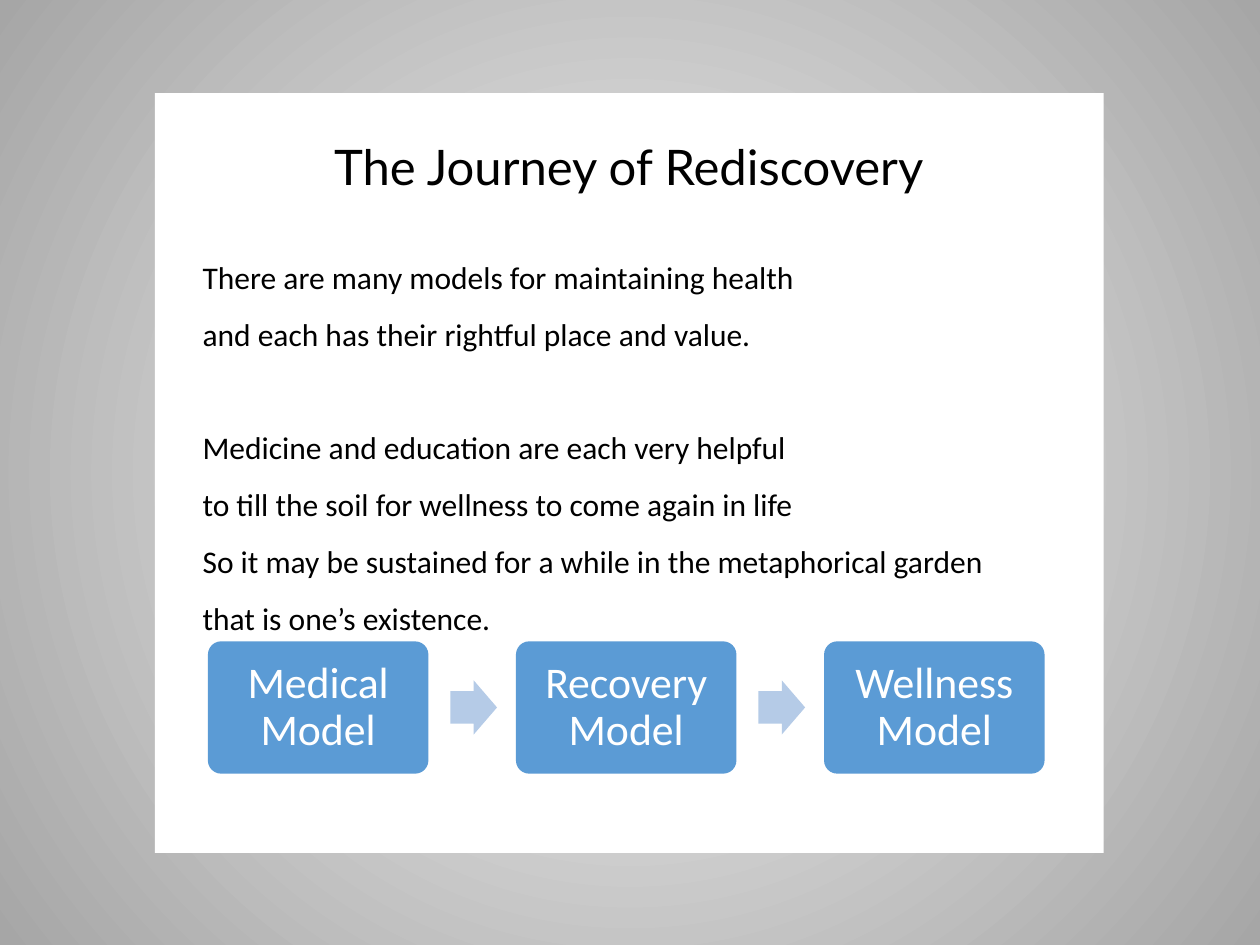
from lxml import etree
from pptx import Presentation
from pptx.dml.color import RGBColor
from pptx.enum import shapes, text
from pptx.util import Inches, Pt

HUES = {"rim": "A6A6A6", "core": "F2F2F2", "panel": "FFFFFF", "ink": "000000",
        "box": "5B9BD5", "arrow": "B5CBE7", "label": "FFFFFF"}
LINES = ["There are many models for maintaining health",
         "and each has their rightful place and value.",
         "Medicine and education are each very helpful",
         "to till the soil for wellness to come again in life",
         "So it may be sustained for a while in the metaphorical garden "
         "that is one’s existence."]
MODELS = ["Medical Model", "Recovery Model", "Wellness Model"]


def hue(name):
    return RGBColor.from_string(HUES[name])


def style(para, face, size, color):
    para.font.name = face
    para.font.size = Pt(size)
    para.font.color.rgb = hue(color)


def add_block(slide, kind, box, color):
    """Add a plain filled shape; box is left, top, width, height in inches."""
    block = slide.shapes.add_shape(kind, *map(Inches, box))
    block.shadow.inherit = False
    block.fill.solid()
    block.fill.fore_color.rgb = hue(color)
    block.line.fill.background()
    return block


def set_back(slide):
    """Fill the background with a gradient that spreads from the centre."""
    fill = slide.background.fill
    fill.gradient()
    for stop, name, pos in zip(fill.gradient_stops, ("core", "rim"), (0, 1)):
        stop.color.rgb = hue(name)
        stop.position = pos
    grad = slide.background._cSld.find(".//{*}gradFill")
    lin = grad.find("{*}lin")
    space = lin.tag[:-len("lin")]
    radial = etree.Element(space + "path", {"path": "circle"})
    etree.SubElement(radial, space + "fillToRect",
                     dict.fromkeys("ltrb", "50000"))
    grad.replace(lin, radial)


def add_title(slide, box):
    title = slide.shapes.title
    title.left, title.top, title.width, title.height = map(Inches, box)
    frame = title.text_frame
    frame.text = "The Journey of Rediscovery"
    frame.auto_size = text.MSO_AUTO_SIZE.NONE
    para = frame.paragraphs[0]
    para.alignment = text.PP_ALIGN.CENTER
    style(para, "Lato", 28, "ink")


def add_body(slide, box):
    frame = slide.shapes.add_textbox(*map(Inches, box)).text_frame
    frame.word_wrap = True
    frame.text = "\n".join(LINES)
    for para in frame.paragraphs:
        para.line_spacing = 1.5
        style(para, "Calibri", 18, "ink")
    frame.paragraphs[2].space_before = Pt(32.5)


def add_flow(slide, box):
    """Lay out the models as equal boxes with an arrow in each gap."""
    left, top, width, height = box
    wide, tip, tall = 1.75, 0.37, 0.43
    step = (width - wide) / (len(MODELS) - 1)
    for i, model in enumerate(MODELS):
        x = left + i * step
        card = add_block(slide, shapes.MSO_SHAPE.ROUNDED_RECTANGLE,
                         (x, top, wide, height), "box")
        card.adjustments[0] = 0.1
        frame = card.text_frame
        frame.word_wrap = True
        frame.vertical_anchor = text.MSO_ANCHOR.MIDDLE
        frame.margin_left = frame.margin_right = Inches(0.13)
        frame.margin_top = frame.margin_bottom = Inches(0.13)
        frame.text = model
        para = frame.paragraphs[0]
        para.alignment = text.PP_ALIGN.CENTER
        para.line_spacing = 0.9
        style(para, "Calibri", 25, "label")
        if i:
            spot = (x - 0.15 - tip, top + (height - tall) / 2, tip, tall)
            arrow = add_block(slide, shapes.MSO_SHAPE.RIGHT_ARROW, spot, "arrow")
            arrow.adjustments[0] = 0.6


def main():
    prs = Presentation()
    prs.slide_width, prs.slide_height = Inches(10), Inches(7.5)
    slide = prs.slides.add_slide(prs.slide_layouts[5])
    set_back(slide)
    panel = add_block(slide, shapes.MSO_SHAPE.RECTANGLE,
                      (1.23, 0.74, 7.53, 6.03), "panel")
    slide.shapes.title.element.addprevious(panel.element)
    add_title(slide, (1.51, 1.03, 6.96, 0.57))
    add_body(slide, (1.51, 1.85, 6.66, 3.26))
    add_flow(slide, (1.65, 5.09, 6.64, 1.05))
    prs.save("out.pptx")


if __name__ == "__main__":
    main()
